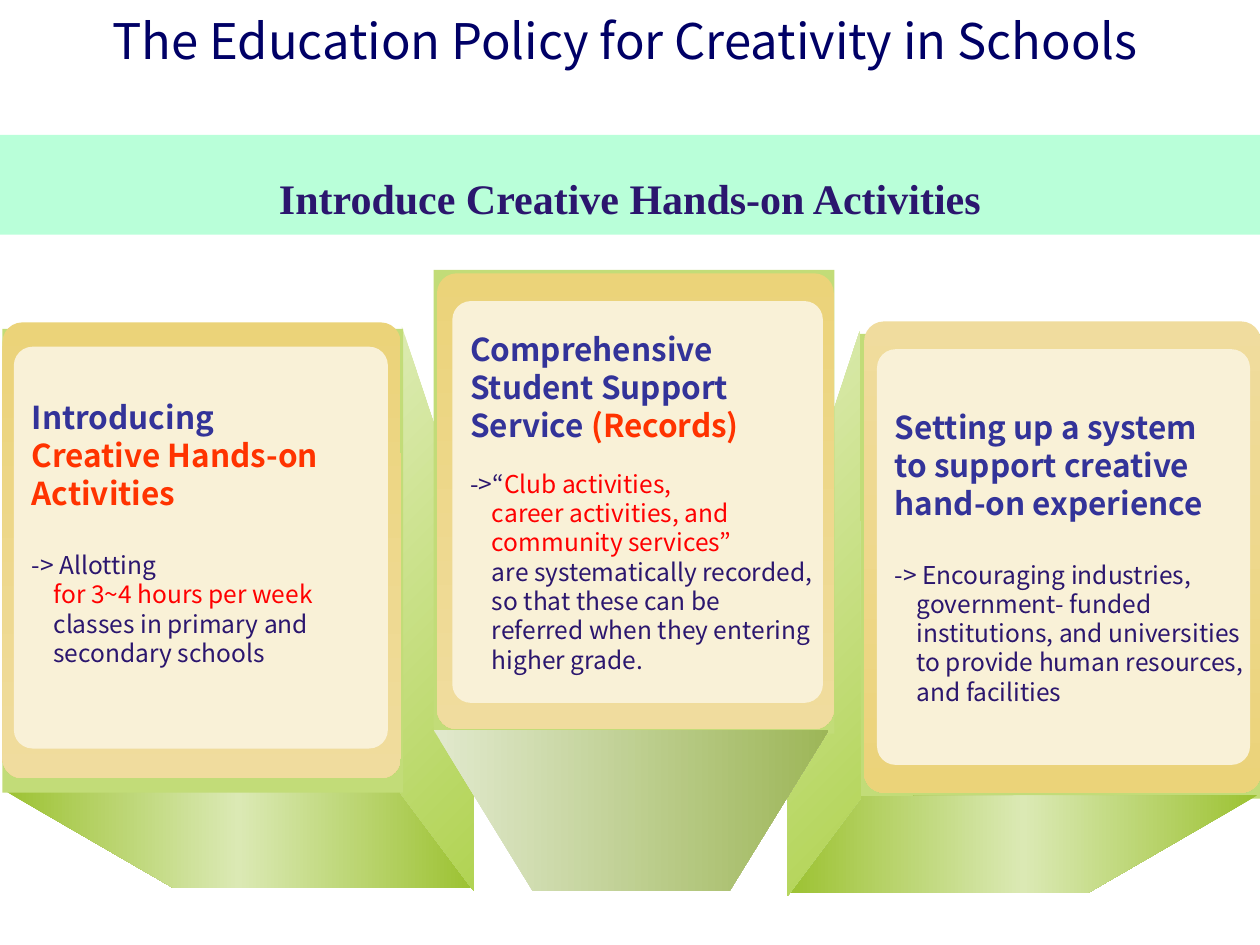
from lxml import etree
from pptx import Presentation
from pptx.dml.color import RGBColor
from pptx.enum.shapes import MSO_SHAPE
from pptx.enum.text import MSO_ANCHOR, PP_ALIGN
from pptx.oxml.ns import qn
from pptx.util import Cm, Pt

RECT, ROUNDED = MSO_SHAPE.RECTANGLE, MSO_SHAPE.ROUNDED_RECTANGLE
MIDDLE, CENTER = MSO_ANCHOR.MIDDLE, PP_ALIGN.CENTER
SANS, SERIF = "Noto Sans CJK KR", "Times New Roman"
NAVY, BLUE, PURPLE, ORANGE, RED = "000066", "333399", "2B166E", "FF3300", "FF0000"
GREEN, CREAM, MINT = "C2DC78", "F9F1D7", "B9FFD9"
GOLD, SAND = "EBD379", "F0DC9E"
FLOOR_COLORS = ["9CC232", "DBE9B4", "9CC232"]
SIDE_COLORS = ["DCEBB1", "B1D353"]
BASE_COLORS = ["E1E9CD", "9DB658"]

TITLE = "The Education Policy for Creativity in Schools"
BANNER = "Introduce Creative Hands-on Activities"

# Boxes are left, top, width, height in cm; each text line is a list of (text, colour).
LEFT = {
    "back": (0.05, 6.63, 8.08, 9.35),
    "frame": (0.05, 6.5, 8.03, 9.19),
    "panel": (0.28, 6.99, 7.54, 8.1),
    "frame_colors": [GOLD, SAND],
    "gap": 21.7, "bottom": 0.72,
    "heading": [[("Introducing", BLUE)], [("Creative Hands-on", ORANGE)],
                [("Activities", ORANGE)]],
    "detail": [[("-> Allotting", PURPLE)], [("for 3~4 hours per week", RED)],
               [("classes in primary and", PURPLE)], [("secondary schools", PURPLE)]],
}
RIGHT = {
    "back": (17.32, 6.73, 8.08, 9.37),
    "frame": (17.42, 6.48, 8, 9.5),
    "panel": (17.68, 7.04, 7.52, 8.38),
    "frame_colors": [SAND, GOLD],
    "gap": 21.7, "bottom": 0.13,
    "heading": [[("Setting up a system", BLUE)], [("to support creative", BLUE)],
                [("hand-on experience", BLUE)]],
    "detail": [[("-> Encouraging industries,", PURPLE)], [("government- funded", PURPLE)],
               [("institutions, and universities", PURPLE)],
               [("to provide human resources,", PURPLE)], [("and facilities", PURPLE)]],
}
MIDDLE_CARD = {
    "back": (8.74, 5.44, 8.08, 9.35),
    "frame": (8.81, 5.51, 8, 9.19),
    "panel": (9.12, 6.07, 7.47, 8.1),
    "frame_colors": [GOLD, SAND],
    "gap": 14.4, "bottom": 0.13,
    "heading": [[("Comprehensive", BLUE)], [("Student Support", BLUE)],
                [("Service ", BLUE), ("(Records)", ORANGE)]],
    "detail": [[("->“", PURPLE), ("Club activities,", RED)],
               [("career activities, and", RED)], [("community services”", RED)],
               [("are systematically recorded,", PURPLE)], [("so that these can be", PURPLE)],
               [("referred when they entering", PURPLE)], [("higher grade.", PURPLE)]],
}
FLOOR = [(0.08, 15.93), (3.51, 17.91), (9.53, 17.91), (8.08, 15.95)]
SIDE = [(8.1, 6.58), (9.55, 10.97), (9.55, 17.96), (8.08, 16)]
BASE = [(8.74, 14.71), (10.74, 17.96), (14.71, 17.96), (16.71, 14.71)]
MIRROR_WIDTH, MIRROR_DROP = 25.43, 0.1
DETAIL_INDENT = 0.44


def rgb(color):
    return RGBColor.from_string(color)


def paint(sp, colors, angle=0):
    """Fill with one colour, or with a list spread evenly along a clockwise angle."""
    sp.shadow.inherit = False
    sp.line.fill.background()
    if isinstance(colors, str):
        sp.fill.solid()
        sp.fill.fore_color.rgb = rgb(colors)
        return
    sp.fill.gradient()
    grad = sp._element.spPr.find(qn("a:gradFill"))
    for child in list(grad):
        grad.remove(child)
    stops = etree.SubElement(grad, qn("a:gsLst"))
    for i, color in enumerate(colors):
        stop = etree.SubElement(stops, qn("a:gs"), pos=str(100000 * i // (len(colors) - 1)))
        etree.SubElement(stop, qn("a:srgbClr"), val=color)
    etree.SubElement(grad, qn("a:lin"), ang=str(angle * 60000), scaled="0")


def add_box(kind, box, colors, angle=0):
    sp = s.shapes.add_shape(kind, *map(Cm, box))
    if kind == ROUNDED:
        sp.adjustments[0] = 0.05
    paint(sp, colors, angle)
    return sp


def add_outline(points, colors, angle=0):
    corners = [(Cm(x), Cm(y)) for x, y in points]
    builder = s.shapes.build_freeform(*corners[0])
    builder.add_line_segments(corners[1:], close=True)
    paint(builder.convert_to_shape(), colors, angle)


def mirror(points):
    return [(MIRROR_WIDTH - x, y + MIRROR_DROP) for x, y in points]


def style(r, font, size, color, bold=False):
    r.font.name, r.font.size, r.font.bold = font, Pt(size), bold
    r.font.color.rgb = rgb(color)


def add_line(p, runs, size, pitch, bold):
    p.alignment = PP_ALIGN.LEFT
    p.line_spacing = Pt(pitch)
    for text, color in runs:
        r = p.add_run()
        r.text = text
        style(r, SANS, size, color, bold)


def add_card(card):
    add_box(ROUNDED, card["frame"], card["frame_colors"], 90)
    tf = add_box(ROUNDED, card["panel"], CREAM).text_frame
    tf.word_wrap = True
    tf.vertical_anchor = MIDDLE
    tf.margin_right = 0
    tf.margin_bottom = Cm(card["bottom"])
    for i, runs in enumerate(card["heading"]):
        p = tf.add_paragraph() if i else tf.paragraphs[0]
        add_line(p, runs, 18, 21.7, True)
    for i, runs in enumerate(card["detail"]):
        p = tf.add_paragraph()
        add_line(p, runs, 14, 16.75, False)
        if i:
            p._p.get_or_add_pPr().set("marL", str(Cm(DETAIL_INDENT)))
        else:
            p.space_before = Pt(card["gap"])


prs = Presentation()
prs.slide_width, prs.slide_height = Cm(25.4), Cm(19.05)
s = prs.slides.add_slide(prs.slide_layouts[6])

add_outline(FLOOR, FLOOR_COLORS)
add_outline(SIDE, SIDE_COLORS, 45)
add_box(RECT, LEFT["back"], GREEN)
add_card(LEFT)

add_box(RECT, RIGHT["back"], GREEN)
add_outline(mirror(FLOOR), FLOOR_COLORS)
add_outline(mirror(SIDE), SIDE_COLORS, 45)
add_card(RIGHT)

add_box(RECT, MIDDLE_CARD["back"], GREEN)
add_card(MIDDLE_CARD)
add_outline(BASE, BASE_COLORS)

title = s.shapes.add_textbox(Cm(-0.1), 0, Cm(25.4), Cm(1.93))
banner = add_box(RECT, (0, 2.72, 25.4, 2.01), MINT)
banner.text_frame.vertical_anchor = MIDDLE
for sp, text, font, size, color, bold, spacing in [
    (title, TITLE, SANS, 28, NAVY, False, Pt(36)),
    (banner, BANNER, SERIF, 24, PURPLE, True, 1.5),
]:
    tf = sp.text_frame
    tf.word_wrap = True
    p = tf.paragraphs[0]
    p.text = text
    p.alignment = CENTER
    p.line_spacing = spacing
    style(p.runs[0], font, size, color, bold)

prs.save("out.pptx")
